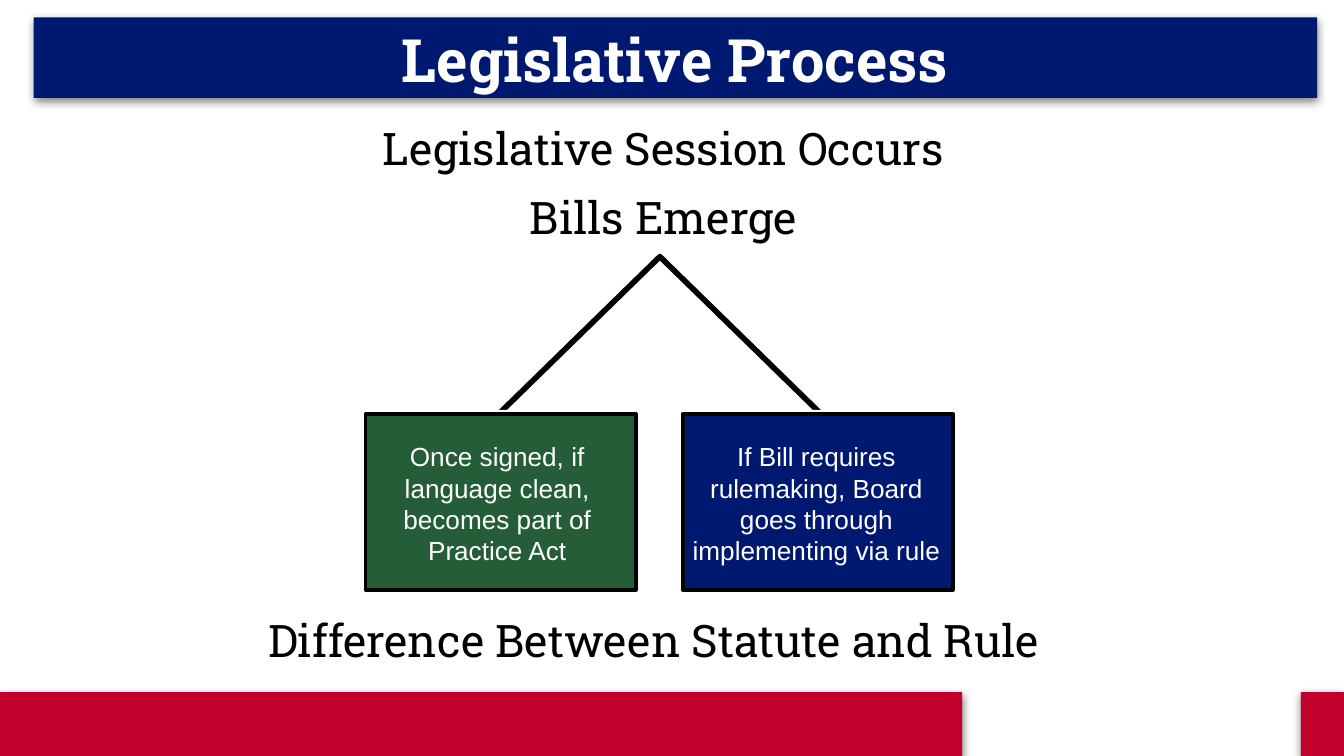
from lxml import etree
from pptx import Presentation
from pptx.dml.color import RGBColor
from pptx.enum.shapes import MSO_SHAPE
from pptx.enum.text import MSO_ANCHOR, PP_ALIGN
from pptx.oxml.ns import qn
from pptx.util import Inches, Pt

WHITE, BLACK = "FFFFFF", "000000"
RED, NAVY, GREEN = "C2002C", "001970", "245D38"
HEADING = {"name": "Roboto Slab", "size": Pt(24)}
TITLE = {"name": "Roboto Slab", "size": Pt(32), "bold": True}
BODY = {"name": "Arial", "size": Pt(14)}


def color(value):
    return RGBColor.from_string(value)


def add_shadow(shape):
    """Soft half-transparent shadow falling straight down."""
    effects = shape._element.spPr.find(qn("a:effectLst"))
    outer = etree.SubElement(effects, qn("a:outerShdw"), blurRad=str(Pt(4.5)),
                             dist=str(Pt(1.5)), dir="5400000", algn="bl", rotWithShape="0")
    black = etree.SubElement(outer, qn("a:srgbClr"), val=BLACK)
    etree.SubElement(black, qn("a:alpha"), val="50000")


def add_block(slide, box, fill, line=None, width=2, shadow=False, kind=MSO_SHAPE.RECTANGLE):
    block = slide.shapes.add_shape(kind, *map(Inches, box))
    block.shadow.inherit = False
    block.fill.solid()
    block.fill.fore_color.rgb = color(fill)
    if line:
        block.line.color.rgb = color(line)
        block.line.width = Pt(width)
    else:
        block.line.fill.background()
    if shadow:
        add_shadow(block)


def add_label(slide, box, text, style, ink=BLACK, anchor=MSO_ANCHOR.TOP):
    frame = slide.shapes.add_textbox(*map(Inches, box)).text_frame
    frame.word_wrap = True
    frame.vertical_anchor = anchor
    paragraph = frame.paragraphs[0]
    paragraph.alignment = PP_ALIGN.CENTER
    run = paragraph.add_run()
    run.text = text
    for name, value in style.items():
        setattr(run.font, name, value)
    run.font.color.rgb = color(ink)


def add_footer(slide, left, top, width, height):
    """Red band with a white panel let into it."""
    gap_left, gap_right = left + 7.16, left + 9.68
    add_block(slide, (gap_right, top, left + width - gap_right, height), RED, shadow=True)
    add_block(slide, (gap_left + 0.02, top - 0.42, 2.4, 0.74), WHITE, line=WHITE)
    add_block(slide, (left, top, gap_left - left, height), RED, shadow=True)


def add_title(slide, left, top, width, height):
    add_block(slide, (left, top, width, height), NAVY, shadow=True)
    add_label(slide, (left, top - 0.07, width, height + 0.15), "Legislative Process",
              TITLE, WHITE, MSO_ANCHOR.MIDDLE)


def add_steps(slide, left, top, width, pitch):
    for row, step in enumerate(["Legislative Session Occurs", "Bills Emerge"]):
        add_label(slide, (left, top + row * pitch, width, 0.5), step, HEADING)


def add_fork(slide, left, top, width, height):
    """Triangle whose base is covered, leaving two branches."""
    add_block(slide, (left, top, width, height), WHITE, line=BLACK, width=3,
              kind=MSO_SHAPE.ISOSCELES_TRIANGLE)
    add_block(slide, (left, top + height - 0.1, width + 0.1, 0.16), WHITE)


def add_outcome(slide, left, top, width, height, fill, text, inset, text_width):
    add_block(slide, (left, top, width, height), fill, line=BLACK)
    add_label(slide, (left + inset, top + 0.15, text_width, 1.05), text, BODY, WHITE)


def main():
    deck = Presentation()
    deck.slide_width = Inches(10)
    deck.slide_height = deck.slide_width * 9 // 16
    slide = deck.slides.add_slide(deck.slide_layouts[6])

    # Frame of the slide
    add_footer(slide, 0, 5.15, 10, 0.48)
    add_title(slide, 0.25, 0.13, 9.55, 0.6)

    # Process and its two branches
    add_steps(slide, 2.14, 0.85, 5.59, 0.51)
    add_fork(slide, 3.64, 1.91, 2.54, 1.24)
    outcomes = [
        (GREEN, "Once signed, if language clean, becomes part of Practice Act", 0.13, 1.7),
        (NAVY, "If Bill requires rulemaking, Board goes through implementing via rule",
         -0.04, 2.07),
    ]
    for column, outcome in enumerate(outcomes):
        add_outcome(slide, 2.72 + column * 2.36, 3.08, 2.01, 1.31, *outcome)

    # Closing line
    add_label(slide, (1.79, 4.51, 6.15, 0.5), "Difference Between Statute and Rule", HEADING)

    deck.save("out.pptx")


if __name__ == "__main__":
    main()
